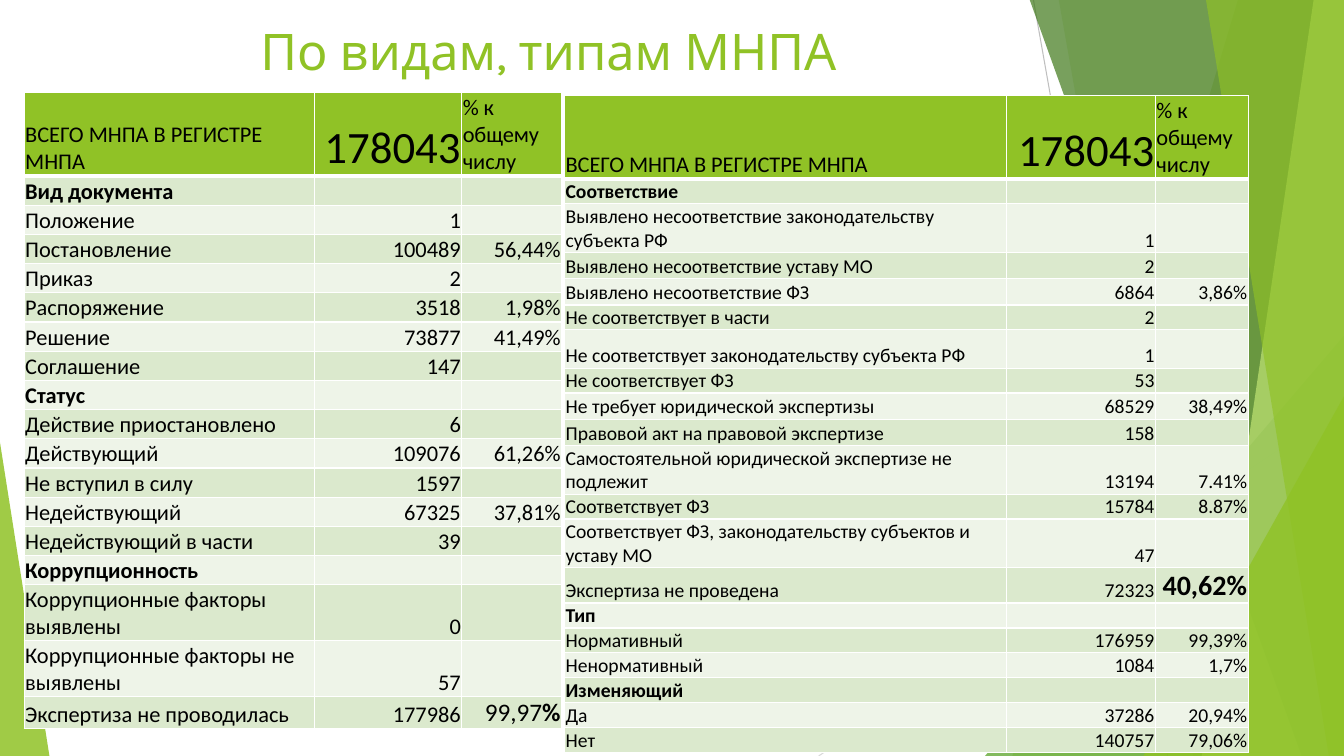
from dataclasses import dataclass

import pptx
import pptx.dml.color
import pptx.enum.shapes
import pptx.enum.text
import pptx.oxml.ns
import pptx.util
from lxml import etree

Inches = pptx.util.Inches
Pt = pptx.util.Pt
qn = pptx.oxml.ns.qn
ALIGN = pptx.enum.text.PP_ALIGN
ANCHOR = pptx.enum.text.MSO_ANCHOR

COLORS = {
    "green": "90C226", "leaf": "54A021", "dark": "3F7819", "lime": "C0E474",
    "band": "DBE9CD", "pale": "EEF4E8", "white": "FFFFFF", "black": "000000",
    "line_dark": "BFBFBF", "line_light": "D9D9D9",
}
WIDTH, HEIGHT, TOP = 13.33, 7.5, -0.01


@dataclass
class Ray:
    start: tuple[float, float]
    end: tuple[float, float]
    color: str


@dataclass
class Facet:
    top_x: float
    bottom_x: float
    color: str
    alpha: int


@dataclass
class Triangle:
    left: float
    top: float
    width: float
    apex: float
    color: str
    alpha: int


@dataclass
class Run:
    text: str
    size: float
    bold: bool = False


@dataclass
class Row:
    label: str
    count: str = ""
    share: str | tuple[Run, ...] = ""
    height: float = 0


@dataclass
class Register:
    left: float
    top: float
    cols: tuple[float, ...]
    header_height: float
    row_height: float
    size: float
    rows: list[Row]


RAYS = [
    Ray((10.25, 0), (11.58, HEIGHT), "line_dark"),
    Ray((WIDTH, 4.03), (8.12, HEIGHT), "line_light"),
]
DECOR = [
    Facet(12.28, 10.04, "green", 30),
    Facet(10.5, 11.83, "green", 20),
    Triangle(9.77, 3.33, 3.56, 1, "leaf", 72),
    Facet(10.21, 12.91, "dark", 70),
    Facet(13.03, 11.92, "lime", 70),
    Facet(11.96, 13.18, "green", 65),
    Triangle(11.34, 3.93, 1.99, 1, "green", 80),
    Triangle(0, 4.39, 0.49, 0, "green", 85),
]
REGISTERS = [
    Register(0.24, 0.92, (2.88, 1.46, 0.99), 0.67, 0.29, 16, [
        Row("Вид документа"),
        Row("Положение", "1"),
        Row("Постановление", "100489", "56,44%"),
        Row("Приказ", "2"),
        Row("Распоряжение", "3518", "1,98%"),
        Row("Решение", "73877", "41,49%"),
        Row("Соглашение", "147"),
        Row("Статус"),
        Row("Действие приостановлено", "6"),
        Row("Действующий", "109076", "61,26%"),
        Row("Не вступил в силу", "1597"),
        Row("Недействующий", "67325", "37,81%"),
        Row("Недействующий в части", "39"),
        Row("Коррупционность"),
        Row("Коррупционные факторы выявлены", "0", height=0.54),
        Row("Коррупционные факторы не выявлены", "57", height=0.54),
        Row("Экспертиза не проводилась", "177986", (Run("99,97", 18), Run("%", 18, True))),
    ]),
    Register(5.6, 0.95, (4.38, 1.48, 0.92), 0.71, 0.23, 14, [
        Row("Соответствие"),
        Row("Выявлено несоответствие законодательству субъекта РФ", "1", height=0.45),
        Row("Выявлено несоответствие уставу МО", "2", height=0.26),
        Row("Выявлено несоответствие ФЗ", "6864", "3,86%", 0.26),
        Row("Не соответствует в части", "2"),
        Row("Не соответствует законодательству субъекта РФ", "1", height=0.38),
        Row("Не соответствует ФЗ", "53"),
        Row("Не требует юридической экспертизы", "68529", "38,49%", 0.26),
        Row("Правовой акт на правовой экспертизе", "158", height=0.26),
        Row("Самостоятельной юридической экспертизе не подлежит", "13194", "7.41%", 0.45),
        Row("Соответствует ФЗ", "15784", "8.87%"),
        Row("Соответствует ФЗ, законодательству субъектов и уставу МО", "47", height=0.45),
        Row("Экспертиза не проведена", "72323", (Run("40,62%", 20, True),)),
        Row("Тип"),
        Row("Нормативный", "176959", "99,39%"),
        Row("Ненормативный", "1084", "1,7%"),
        Row("Изменяющий"),
        Row("Да", "37286", "20,94%"),
        Row("Нет", "140757", "79,06%"),
    ]),
]


def rgb(color: str) -> pptx.dml.color.RGBColor:
    return pptx.dml.color.RGBColor.from_string(COLORS[color])


def add_ray(s, ray: Ray) -> None:
    line = s.shapes.add_connector(pptx.enum.shapes.MSO_CONNECTOR.STRAIGHT,
                                  *map(Inches, ray.start + ray.end))
    line.line.color.rgb = rgb(ray.color)
    line.line.width = Pt(0.75)
    etree.SubElement(line._element.spPr, qn("a:effectLst"))


def add_decor(s, item: Facet | Triangle) -> None:
    if isinstance(item, Facet):
        corners = [(WIDTH, TOP), (WIDTH, HEIGHT), (item.bottom_x, HEIGHT)]
        builder = s.shapes.build_freeform(Inches(item.top_x), Inches(TOP))
        builder.add_line_segments([(Inches(x), Inches(y)) for x, y in corners])
        sp = builder.convert_to_shape()
    else:
        sp = s.shapes.add_shape(pptx.enum.shapes.MSO_SHAPE.ISOSCELES_TRIANGLE,
                                Inches(item.left), Inches(item.top),
                                Inches(item.width), Inches(HEIGHT - item.top))
        sp.adjustments[0] = item.apex
    sp.shadow.inherit = False
    sp.line.fill.background()
    sp.fill.solid()
    sp.fill.fore_color.rgb = rgb(item.color)
    color = sp._element.spPr.find(qn("a:solidFill"))[0]
    etree.SubElement(color, qn("a:alpha"), val=str(item.alpha * 1000))


def add_run(p, run: Run, font: str, color: str) -> None:
    r = p.add_run()
    r.text = run.text
    r.font.size = Pt(run.size)
    r.font.bold = run.bold
    r.font.name = font
    r.font.color.rgb = rgb(color)


def set_borders(cell, top: float, bottom: float) -> None:
    tc_pr = cell._tc.get_or_add_tcPr()
    for side, width in (("L", 1), ("R", 1), ("T", top), ("B", bottom)):
        ln = etree.SubElement(tc_pr, qn(f"a:ln{side}"), w=str(Pt(width)))
        fill = etree.SubElement(ln, qn("a:solidFill"))
        etree.SubElement(fill, qn("a:srgbClr"), val=COLORS["white"])


def fill_cell(cell, runs: tuple[Run, ...], align, fill: str, size: float) -> None:
    cell.margin_left = cell.margin_right = cell.margin_top = Inches(0.01)
    cell.margin_bottom = 0
    cell.vertical_anchor = ANCHOR.BOTTOM
    cell.fill.solid()
    cell.fill.fore_color.rgb = rgb(fill)
    p = cell.text_frame.paragraphs[0]
    p.alignment = align
    for run in runs:
        add_run(p, run, "Calibri", "black")
    if not runs:
        etree.SubElement(p._p, qn("a:endParaRPr"), sz=str(int(size * 100)))


def add_register(s, reg: Register) -> None:
    header = Row("ВСЕГО МНПА В РЕГИСТРЕ МНПА", (Run("178043", 32),),
                 (Run("% к общему числу", 16),), reg.header_height)
    header.label = (Run(header.label, 16),)
    rows = [header] + reg.rows
    heights = [row.height or reg.row_height for row in rows]
    table = s.shapes.add_table(len(rows), len(reg.cols), Inches(reg.left), Inches(reg.top),
                               Inches(sum(reg.cols)), Inches(sum(heights))).table
    table.first_row = table.horz_banding = False
    for col, width in zip(table.columns, reg.cols):
        col.width = Inches(width)
    for i, (row, height) in enumerate(zip(rows, heights)):
        table.rows[i].height = Inches(height)
        fill = "green" if i == 0 else ("pale", "band")[i % 2]
        for j, value in enumerate((row.label, row.count, row.share)):
            if isinstance(value, str):
                value = (Run(value, reg.size, not row.count),) if value else ()
            left = j == 0 or (i == 0 and j == 2)
            cell = table.cell(i, j)
            set_borders(cell, 3 if i == 1 else 1, 3 if i == 0 else 1)
            fill_cell(cell, value, ALIGN.LEFT if left else ALIGN.RIGHT, fill, reg.size)


def add_title(s) -> None:
    title = s.shapes.title
    title.left, title.top, title.width, title.height = map(Inches, (0.74, 0.15, 9.4, 1.3))
    tf = title.text_frame
    tf.auto_size = pptx.enum.text.MSO_AUTO_SIZE.NONE
    tf.vertical_anchor = ANCHOR.TOP
    p = tf.paragraphs[0]
    p.alignment = ALIGN.CENTER
    add_run(p, Run("По видам, типам МНПА", 36), "Karla", "green")
    s.shapes._spTree.append(title._element)


def main() -> None:
    prs = pptx.Presentation()
    prs.slide_width, prs.slide_height = Inches(WIDTH), Inches(HEIGHT)
    s = prs.slides.add_slide(prs.slide_layouts[5])
    for ray in RAYS:
        add_ray(s, ray)
    for item in DECOR:
        add_decor(s, item)
    add_title(s)
    for reg in REGISTERS:
        add_register(s, reg)
    prs.save("out.pptx")


if __name__ == "__main__":
    main()
